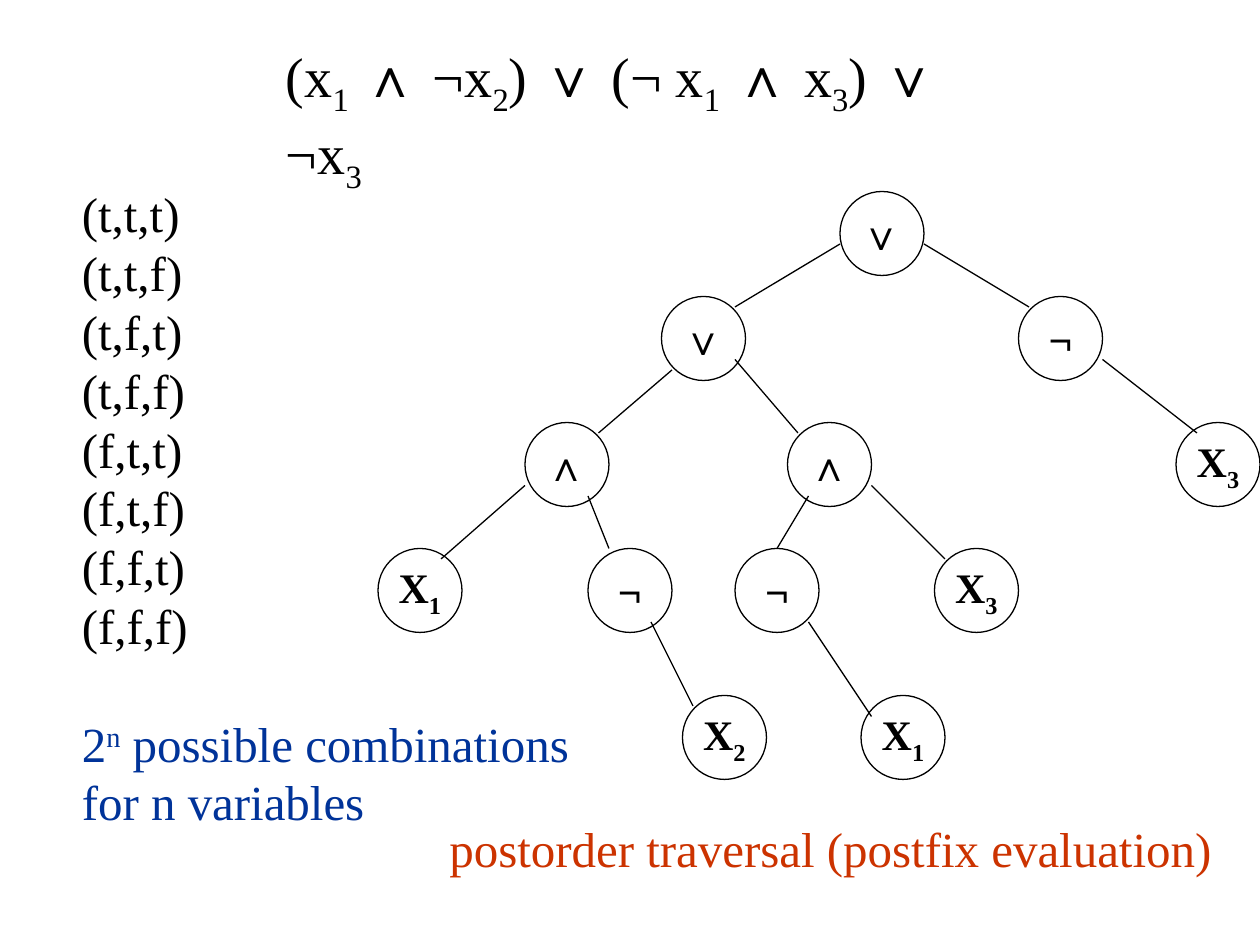
import pptx
import pptx.util
import pptx.dml.color
import pptx.enum.shapes
import pptx.enum.text
import pptx.oxml.ns
import lxml.etree

Cm, Pt = pptx.util.Cm, pptx.util.Pt
BLACK = pptx.dml.color.RGBColor(0x00, 0x00, 0x00)
BLUE = pptx.dml.color.RGBColor(0x00, 0x33, 0x99)
RED = pptx.dml.color.RGBColor(0xCC, 0x33, 0x00)
FONT = "Times New Roman"
BASELINES = {"_": "-25000", "^": "30000"}

GRID = 2.54 / 12  # tree grid step in cm
NODE_SIZE = 8     # node diameter in grid steps

# (column, row, label) in grid steps
NODES = [
    (44, 0, "∨"),
    (27, 10, "∨"), (61, 10, "¬"),
    (14, 22, "∧"), (39, 22, "∧"), (76, 22, "X_3"),
    (0, 34, "X_1"), (20, 34, "¬"), (34, 34, "¬"), (53, 34, "X_3"),
    (29, 48, "X_2"), (46, 48, "X_1"),
]
# (from column, from row, to column, to row) in grid steps
BRANCHES = [
    (44, 5, 34, 11), (52, 5, 62, 11),
    (28, 17, 21, 23), (34, 16, 40, 23), (69, 16, 78, 23),
    (14, 28, 6, 35), (20, 29, 22, 34), (41, 29, 38, 34), (47, 28, 54, 35),
    (26, 41, 30, 49), (41, 41, 47, 50),
]
ASSIGNMENTS = ["(t,t,t)", "(t,t,f)", "(t,f,t)", "(t,f,f)",
               "(f,t,t)", "(f,t,f)", "(f,f,t)", "(f,f,f)"]
COUNT_NOTE = ["2^n possible combinations", "for n variables"]


def write(paragraph, text, size, color=BLACK, bold=False,
          align=pptx.enum.text.PP_ALIGN.LEFT):
    """Write text in which _ lowers and ^ raises the next character."""
    pieces, baseline = [["", None]], None
    for char in text:
        if char in BASELINES:
            baseline = BASELINES[char]
        elif baseline:
            pieces += [[char, baseline], ["", None]]
            baseline = None
        else:
            pieces[-1][0] += char
    for piece, shift in pieces:
        if piece:
            run = paragraph.add_run()
            run.text = piece
            if shift:
                run._r.get_or_add_rPr().set("baseline", shift)
    paragraph.alignment = align
    font = paragraph.font
    font.name, font.size, font.bold = FONT, Pt(size), bold
    font.color.rgb = color


def add_formula(slide, left, top, width, height):
    title = slide.shapes.title
    title.left, title.top = Cm(left), Cm(top)
    title.width, title.height = Cm(width), Cm(height)
    frame = title.text_frame
    frame.word_wrap = True
    frame.auto_size = pptx.enum.text.MSO_AUTO_SIZE.NONE
    frame.vertical_anchor = pptx.enum.text.MSO_ANCHOR.TOP
    write(frame.paragraphs[0],
          "(x_1 ∧ ¬x_2) ∨ (¬ x_1 ∧ x_3) ∨ ¬x_3", 32)


def add_lines(slide, left, top, width, height, lines):
    """Add a text box of (text, colour, space before) lines."""
    box = slide.shapes.add_textbox(Cm(left), Cm(top), Cm(width), Cm(height))
    frame = box.text_frame
    frame.word_wrap = True
    for i, (text, color, gap) in enumerate(lines):
        paragraph = frame.add_paragraph() if i else frame.paragraphs[0]
        paragraph.space_before = Pt(gap)
        write(paragraph, text, 28, color)


def add_tree(slide, left, top):
    def place(column, row):
        return Cm(left + column * GRID), Cm(top + row * GRID)

    # Nodes
    diameter = Cm(NODE_SIZE * GRID)
    for column, row, label in NODES:
        node = slide.shapes.add_shape(
            pptx.enum.shapes.MSO_SHAPE.OVAL, *place(column, row),
            diameter, diameter)
        node.shadow.inherit = False
        node.fill.background()
        node.line.color.rgb = BLACK
        node.line.width = Pt(0.75)
        frame = node.text_frame
        frame.word_wrap = False
        frame.vertical_anchor = pptx.enum.text.MSO_ANCHOR.MIDDLE
        write(frame.paragraphs[0], label, 24, bold=True,
              align=pptx.enum.text.PP_ALIGN.CENTER)

    # Branches
    for x1, y1, x2, y2 in BRANCHES:
        branch = slide.shapes.add_connector(
            pptx.enum.shapes.MSO_CONNECTOR.STRAIGHT,
            *place(x1, y1), *place(x2, y2))
        branch.line.color.rgb = BLACK
        branch.line.width = Pt(0.75)
        lxml.etree.SubElement(branch._element.spPr,
                              pptx.oxml.ns.qn("a:effectLst"))


def main():
    prs = pptx.Presentation()
    prs.slide_width, prs.slide_height = Cm(25.4), Cm(19.05)
    slide = prs.slides.add_slide(prs.slide_layouts.get_by_name("Title Only"))

    add_formula(slide, left=5.51, top=0.71, width=13.84, height=3.2)
    add_tree(slide, left=7.62, top=3.86)

    # Truth assignments and their number
    lines = [(text, BLACK, 0) for text in ASSIGNMENTS]
    lines += [(text, BLUE, gap) for text, gap in zip(COUNT_NOTE, (33.5, 0))]
    add_lines(slide, 1.4, 3.58, 10.4, 13.3, lines)

    # Evaluation order
    add_lines(slide, 8.81, 16.38, 15.9, 1.45,
              [("postorder traversal (postfix evaluation)", RED, 0)])
    prs.save("out.pptx")


if __name__ == "__main__":
    main()
